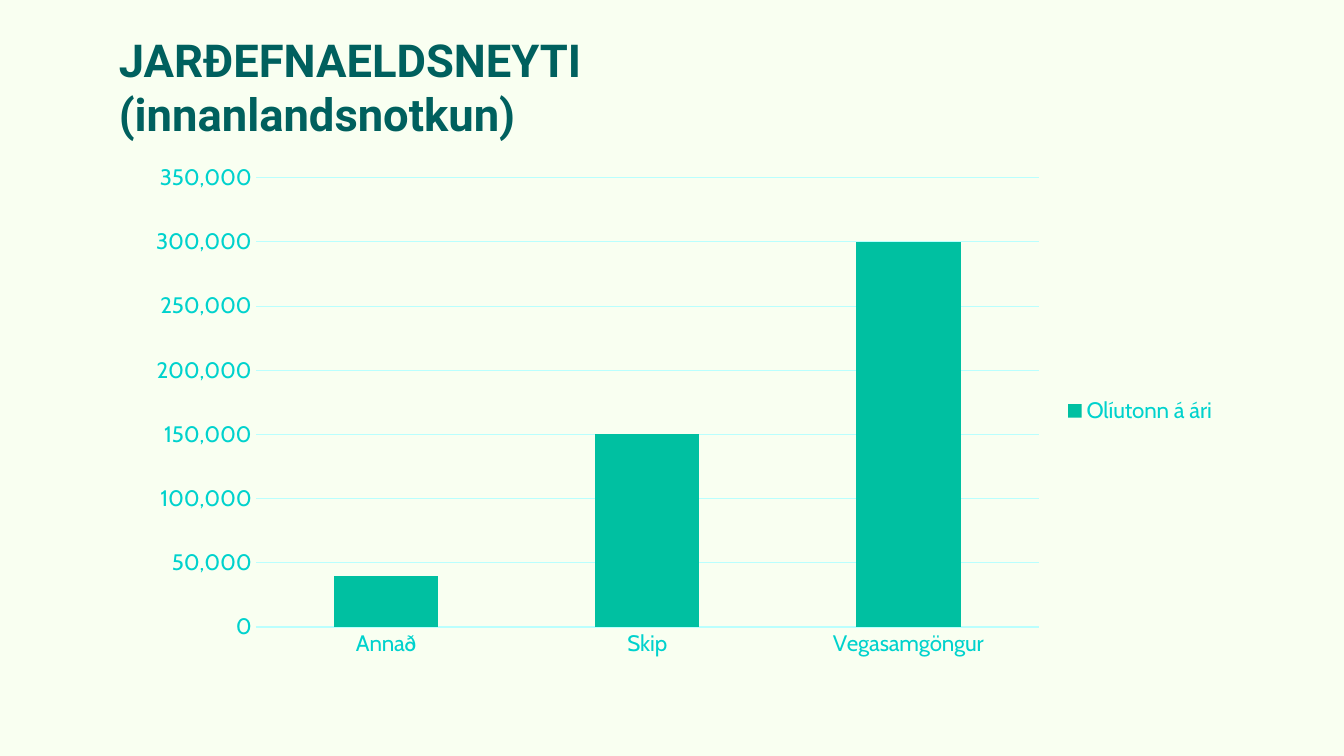
from pptx import Presentation
from pptx.chart.data import CategoryChartData
from pptx.dml.color import RGBColor
from pptx.enum import chart as ch, text
from pptx.util import Cm, Pt

BACKGROUND, HEADING = "F9FFF1", "00605E"
LABEL, GRID, BAR = "00D2CD", "BAFFFE", "00C0A1"


def rgb(value):
    return RGBColor.from_string(value)


class Deck:
    """Holds the style and the current slide."""

    heading_font, body_font = "Roboto", "Cabin"

    def __init__(self, width, height):
        self.presentation = Presentation()
        self.presentation.slide_width = Cm(width)
        self.presentation.slide_height = Cm(height)
        self.slide = None

    def add_slide(self):
        layout = self.presentation.slide_layouts[5]
        self.slide = self.presentation.slides.add_slide(layout)
        fill = self.slide.background.fill
        fill.solid()
        fill.fore_color.rgb = rgb(BACKGROUND)

    def style(self, font, name, size, color, bold=False):
        font.name, font.size, font.bold = name, Pt(size), bold
        font.color.rgb = rgb(color)

    def title(self, wording, left, top, width, height):
        heading = self.slide.shapes.title
        heading.left, heading.top = Cm(left), Cm(top)
        heading.width, heading.height = Cm(width), Cm(height)
        frame = heading.text_frame
        frame.text = wording
        frame.word_wrap = True
        frame.auto_size = text.MSO_AUTO_SIZE.NONE
        frame.vertical_anchor = text.MSO_ANCHOR.BOTTOM
        line = frame.paragraphs[0]
        line.alignment = text.PP_ALIGN.LEFT
        self.style(line.runs[0].font, self.heading_font, 32.4, HEADING, True)

    def column_chart(self, series_name, amounts, left, top, width, height):
        data = CategoryChartData(number_format="#,##0")
        data.categories = list(amounts)
        data.add_series(series_name, list(amounts.values()))
        chart = self.slide.shapes.add_chart(
            ch.XL_CHART_TYPE.COLUMN_CLUSTERED,
            Cm(left), Cm(top), Cm(width), Cm(height), data).chart
        self.style(chart.font, self.body_font, 16, LABEL)
        chart.has_title = False

        chart.has_legend = True
        chart.legend.position = ch.XL_LEGEND_POSITION.RIGHT
        chart.legend.include_in_layout = False
        self.style(chart.legend.font, self.body_font, 16, LABEL)

        columns = chart.plots[0]
        columns.gap_width = 150
        columns.vary_by_categories = False
        fill = columns.series[0].format.fill
        fill.solid()
        fill.fore_color.rgb = rgb(BAR)

        for axis in (chart.category_axis, chart.value_axis):
            axis.major_tick_mark = axis.minor_tick_mark = ch.XL_TICK_MARK.NONE
            self.style(axis.tick_labels.font, self.body_font, 16, LABEL)
        chart.value_axis.has_major_gridlines = True
        chart.value_axis.format.line.fill.background()
        for rule in (chart.category_axis, chart.value_axis.major_gridlines):
            rule.format.line.color.rgb = rgb(GRID)
            rule.format.line.width = Pt(0.75)

        chart.value_axis.minimum_scale = 0
        chart.value_axis.maximum_scale = 350000
        chart.value_axis.major_unit = 50000
        chart.value_axis.tick_labels.number_format = "#,##0"
        chart.value_axis.tick_labels.number_format_is_linked = False


def main():
    deck = Deck(33.87, 19.05)
    deck.add_slide()
    deck.column_chart(
        "Olíutonn á ári",
        {"Annað": 40000, "Skip": 150000, "Vegasamgöngur": 300000},
        3.38, 3.89, 27.56, 12.93)
    deck.title("JARÐEFNAELDSNEYTI (innanlandsnotkun)", 2.74, 0, 12.17, 3.68)
    deck.presentation.save("out.pptx")


if __name__ == "__main__":
    main()
